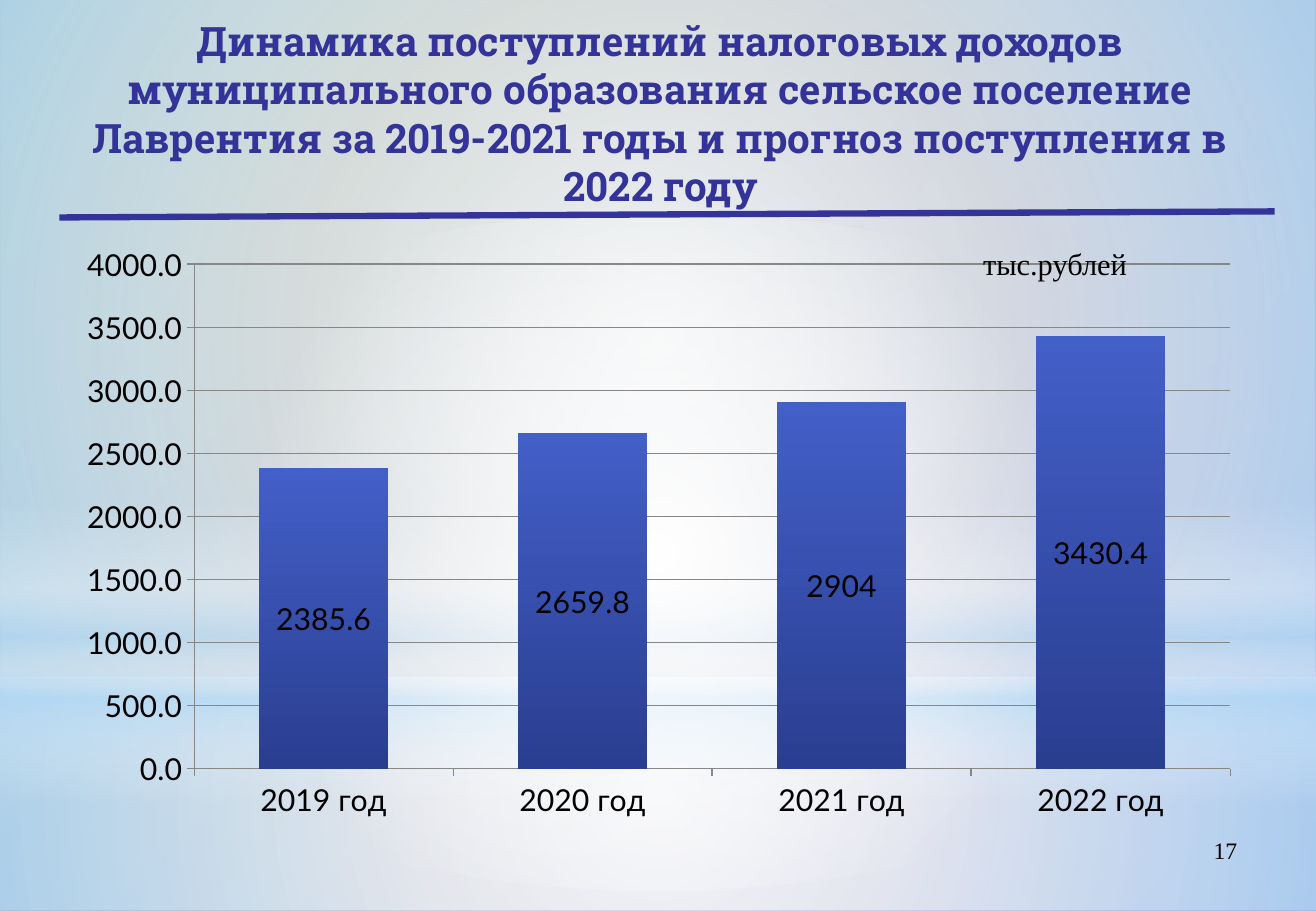
from lxml import etree
from pptx import Presentation
from pptx import util as u
from pptx.chart import data as chart_data
from pptx.dml import color
from pptx.enum import chart as ch, shapes, text
from pptx.oxml import ns

Pt = u.Pt
WIDTH, HEIGHT = 780.48, 540
COLORS = {
    "ink": "000000", "navy": "333399", "grid": "878787", "white": "FFFFFF",
    "sky": "B4DCFA", "sage": "96AB94", "violet": "8488C4",
    "bar_top": "435FC8", "bar_bottom": "2A3E90",
}
REVENUE = {"2019 год": 2385.6, "2020 год": 2659.8, "2021 год": 2904, "2022 год": 3430.4}


def rgb(name):
    return color.RGBColor.from_string(COLORS[name])


def child(parent, tag, **attributes):
    node = etree.SubElement(parent, ns.qn(tag))
    for key, value in attributes.items():
        node.set(key, str(value))
    return node


def paint_gradient(fill, owner, stops, angle=None):
    fill.gradient()
    gradient = next(owner.iter(ns.qn("a:gradFill")))
    for old in list(gradient):
        gradient.remove(old)
    stop_list = child(gradient, "a:gsLst")
    for position, name, opacity in stops:
        stop = child(stop_list, "a:gs", pos=position * 1000)
        tone = child(stop, "a:srgbClr", val=COLORS[name])
        if opacity < 100:
            child(tone, "a:alpha", val=opacity * 1000)
    if angle is None:
        radial = child(gradient, "a:path", path="circle")
        child(radial, "a:fillToRect", l=50000, t=50000, r=50000, b=50000)
    else:
        child(gradient, "a:lin", ang=angle * 60000, scaled=0)


def add_glow(slide, kind, box, stops, angle=None):
    glow = slide.shapes.add_shape(kind, *map(Pt, box))
    glow.shadow.inherit = False
    glow.line.fill.background()
    paint_gradient(glow.fill, glow._element.spPr, stops, angle)


def add_backdrop(slide, box):
    left, top, width, height = box
    rect, oval = shapes.MSO_SHAPE.RECTANGLE, shapes.MSO_SHAPE.OVAL
    horizon = 401.76
    paint_gradient(slide.background.fill, slide._element,
                   [(0, "sage", 100), (100, "violet", 100)], 45)
    add_glow(slide, rect, (left, top + horizon, width, height - horizon),
             [(0, "white", 91), (37, "white", 76), (100, "sky", 79)])
    add_glow(slide, rect, (left, top, width, horizon),
             [(0, "white", 89), (48, "white", 62), (100, "sky", 79)])
    add_glow(slide, rect, (left, top + 296.64, width, 180),
             [(0, "white", 0), (29, "white", 30), (45, "sky", 40),
              (55, "white", 26), (65, "sky", 60), (100, "white", 0)], 90)
    add_glow(slide, oval, (left, top + 126, width, horizon),
             [(0, "white", 100), (56, "white", 0)])


def add_label(slide, box, wording, size, font, tone="ink", bold=False,
              align=text.PP_ALIGN.LEFT, anchor=text.MSO_ANCHOR.TOP, wrap=True):
    label = slide.shapes.add_textbox(*map(Pt, box))
    frame = label.text_frame
    frame.text = wording
    frame.word_wrap = wrap
    frame.vertical_anchor = anchor
    paragraph = frame.paragraphs[0]
    paragraph.alignment = align
    run_font = paragraph.runs[0].font
    run_font.size, run_font.name, run_font.bold = Pt(size), font, bold
    run_font.color.rgb = rgb(tone)


def add_heading(slide, box):
    left, top, width, height = box
    add_label(slide, (left + 5, top, width - 18.5, height - 4),
              "Динамика поступлений налоговых доходов муниципального образования "
              "сельское поселение Лаврентия за 2019-2021 годы и прогноз поступления в 2022 году",
              24, "Roboto Slab", "navy", True, text.PP_ALIGN.CENTER,
              text.MSO_ANCHOR.MIDDLE)
    rule = slide.shapes.add_connector(
        shapes.MSO_CONNECTOR.STRAIGHT, Pt(left), Pt(top + height),
        Pt(left + width), Pt(top + height - 3.6))
    rule.line.color.rgb = rgb("navy")
    rule.line.width = Pt(3.75)
    child(rule._element.spPr, "a:effectLst")


def set_plot_layout(chart, **fractions):
    plot_area = chart._chartSpace.chart.plotArea
    for old in plot_area.findall(ns.qn("c:layout")):
        plot_area.remove(old)
    layout = etree.Element(ns.qn("c:layout"))
    plot_area.insert(0, layout)
    manual = child(layout, "c:manualLayout")
    child(manual, "c:layoutTarget", val="inner")
    for side in ("xMode", "yMode"):
        child(manual, f"c:{side}", val="edge")
    for side, fraction in fractions.items():
        child(manual, f"c:{side}", val=fraction)


def add_revenue_chart(slide, box):
    left, top, width, height = box
    revenue = chart_data.CategoryChartData()
    revenue.categories = list(REVENUE)
    revenue.add_series("Series 1", list(REVENUE.values()))
    chart = slide.shapes.add_chart(
        ch.XL_CHART_TYPE.COLUMN_STACKED, *map(Pt, box), revenue).chart
    chart.has_legend = chart.has_title = False
    chart.font.size, chart.font.name = Pt(17.9), "Lato"
    chart.font.color.rgb = rgb("ink")
    set_plot_layout(chart, x=0.11, y=0.05, w=0.87, h=0.85)

    for axis in (chart.category_axis, chart.value_axis):
        axis.major_tick_mark = ch.XL_TICK_MARK.OUTSIDE
        axis.minor_tick_mark = ch.XL_TICK_MARK.NONE
        axis.format.line.color.rgb = rgb("grid")
    amounts = chart.value_axis
    amounts.minimum_scale, amounts.maximum_scale, amounts.major_unit = 0, 4000, 500
    amounts.tick_labels.number_format = "0.0"
    amounts.tick_labels.number_format_is_linked = False
    amounts.major_gridlines.format.line.color.rgb = rgb("grid")

    columns = chart.plots[0]
    columns.gap_width = columns.overlap = 100
    columns.vary_by_categories = False
    bars = columns.series[0]
    paint_gradient(bars.format.fill, bars._element,
                   [(0, "bar_top", 100), (100, "bar_bottom", 100)], 90)
    values = bars.data_labels
    values.show_value = True
    values.number_format, values.number_format_is_linked = "General", False
    values.position = ch.XL_LABEL_POSITION.CENTER

    add_label(slide, (left + 538.56, top + 2.9, 100.8, 28.8), "тыс.рублей",
              18, "Times New Roman", wrap=False)


def main():
    deck = Presentation()
    deck.slide_width, deck.slide_height = Pt(WIDTH), Pt(HEIGHT)
    slide = deck.slides.add_slide(deck.slide_layouts[6])
    add_backdrop(slide, (0, 0, WIDTH, HEIGHT))
    add_label(slide, (558.72, 491.76, 182.16, 37.44), "17", 14, "Times New Roman",
              align=text.PP_ALIGN.RIGHT)
    add_heading(slide, (35.28, 8.9, 720.72, 120))
    add_revenue_chart(slide, (37.44, 138.96, 706.32, 352.08))
    deck.save("out.pptx")


if __name__ == "__main__":
    main()
